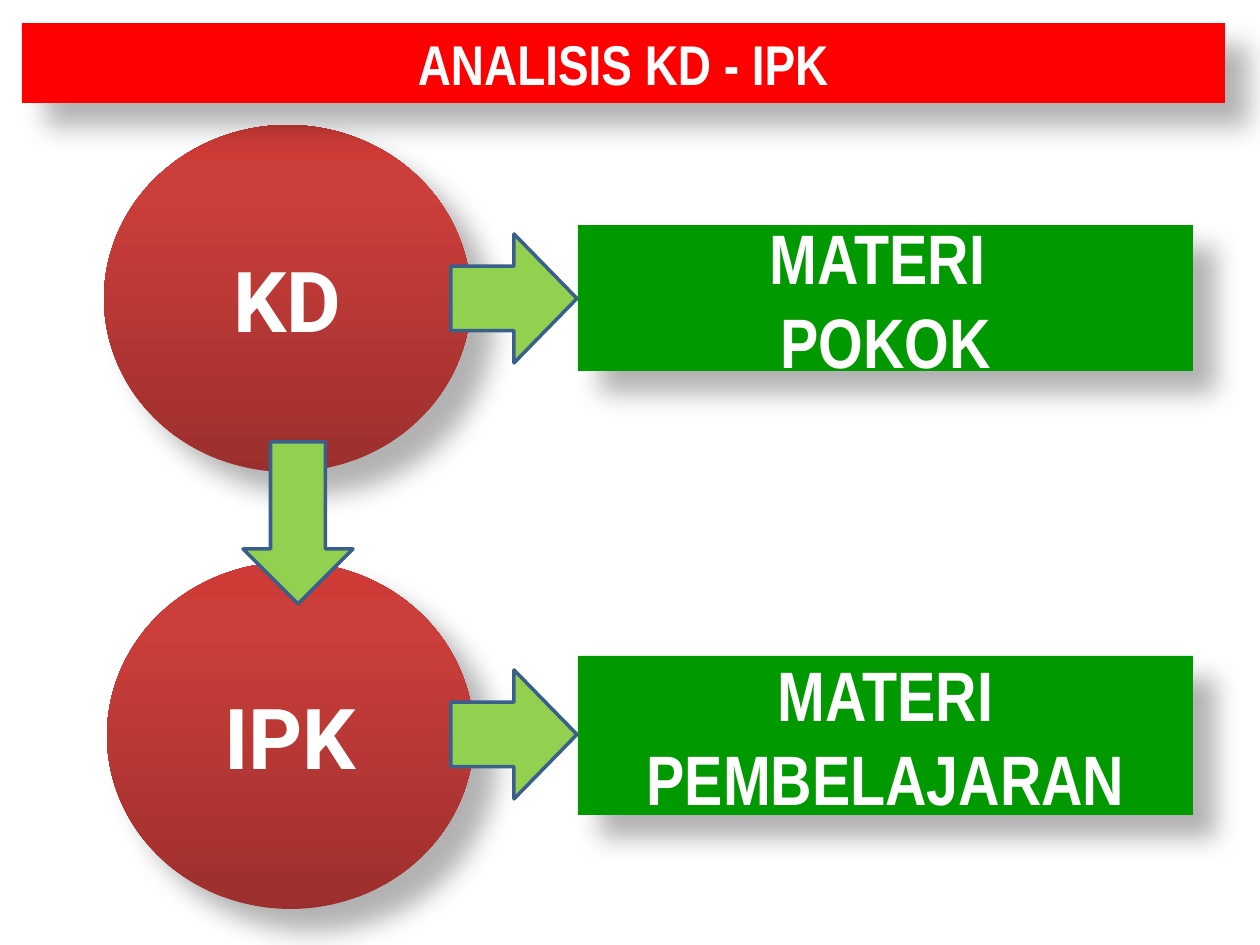
import pptx
import pptx.util
import pptx.dml.color
import pptx.enum.shapes
import pptx.enum.text
import pptx.oxml.ns
import lxml.etree

SCALE = 914400 / 126  # EMU in one px
COLORS = {
    "title": "FF0000", "box": "009900", "arrow": "92D050", "edge": "3A5F8C",
    "text": "FFFFFF", "shade": "000000",
    "dark": "9C2F2D", "mid": "CB3E3A", "light": "CE3B37",
}
SHAPES = pptx.enum.shapes.MSO_SHAPE
TEXT = pptx.enum.text


def emu(px):
    return pptx.util.Emu(round(px * SCALE))


def rgb(name):
    return pptx.dml.color.RGBColor.from_string(COLORS[name])


def node(parent, tag, **attrs):
    name = pptx.oxml.ns.qn("a:" + tag)
    return lxml.etree.SubElement(parent, name, {k: str(v) for k, v in attrs.items()})


class Board:
    def __init__(self, slide):
        self.slide = slide
        self.stops = [(0, "dark"), (80, "mid"), (100, "light")]

    def shape(self, kind, left, top, width, height):
        item = self.slide.shapes.add_shape(
            kind, emu(left), emu(top), emu(width), emu(height))
        item.shadow.inherit = False
        item.line.fill.background()
        return item

    def paint(self, item, color):
        item.fill.solid()
        item.fill.fore_color.rgb = rgb(color)

    def shade(self, item):
        effects = item._element.spPr.find(pptx.oxml.ns.qn("a:effectLst"))
        outer = node(effects, "outerShdw", blurRad=pptx.util.Pt(15),
                     dist=pptx.util.Pt(18), dir=45 * 60000,
                     algn="tl", rotWithShape=0)
        color = node(outer, "srgbClr", val=COLORS["shade"])
        node(color, "alpha", val=30000)

    def label(self, item, lines, size, font):
        frame = item.text_frame
        frame.word_wrap = True
        for i, line in enumerate(lines):
            para = frame.add_paragraph() if i else frame.paragraphs[0]
            para.alignment = TEXT.PP_ALIGN.CENTER
            run = para.add_run()
            run.text = line
            run.font.size = pptx.util.Pt(size)
            run.font.name = font
            run.font.bold = True
            run.font.color.rgb = rgb("text")

    def box(self, left, top, width, height, color, lines, size):
        item = self.shape(SHAPES.RECTANGLE, left, top, width, height)
        self.paint(item, color)
        self.shade(item)
        self.label(item, lines, size, "Arial Narrow")
        return item

    def title(self, left, top, width, height, words):
        item = self.box(left, top, width, height, "title", [words], 32)
        item.text_frame.vertical_anchor = TEXT.MSO_ANCHOR.TOP
        item.text_frame.auto_size = TEXT.MSO_AUTO_SIZE.SHAPE_TO_FIT_TEXT

    def disc(self, left, top, width, height, words):
        item = self.shape(SHAPES.OVAL, left, top, width, height)
        item.fill.gradient()
        item.fill.gradient_angle = 90
        stops = item._element.spPr.find(".//" + pptx.oxml.ns.qn("a:gsLst"))
        for old in list(stops):
            stops.remove(old)
        for place, color in self.stops:
            stop = node(stops, "gs", pos=place * 1000)
            node(stop, "srgbClr", val=COLORS[color])
        self.shade(item)
        self.label(item, [words], 48, "Roboto")

    def arrow(self, kind, left, top, width, height):
        item = self.shape(kind, left, top, width, height)
        self.paint(item, "arrow")
        item.line.color.rgb = rgb("edge")
        item.line.width = pptx.util.Pt(2)


def main():
    deck = pptx.Presentation()
    deck.slide_width, deck.slide_height = emu(1260), emu(945)
    board = Board(deck.slides.add_slide(deck.slide_layouts[6]))

    # Discs and the boxes they lead to
    board.disc(104, 125, 367, 347, "KD")
    board.box(578, 225, 615, 146, "box", ["MATERI ", "POKOK"], 40)
    board.box(578, 656, 615, 159, "box", ["MATERI PEMBELAJARAN"], 40)
    board.disc(107, 562, 367, 347, "IPK")

    # Arrows
    board.arrow(SHAPES.DOWN_ARROW, 243, 442, 110, 162)
    for top in (234, 670):
        board.arrow(SHAPES.RIGHT_ARROW, 451, top, 126, 129)

    # Title bar
    board.title(22, 23, 1203, 80, "ANALISIS KD - IPK")

    deck.save("out.pptx")


if __name__ == "__main__":
    main()
